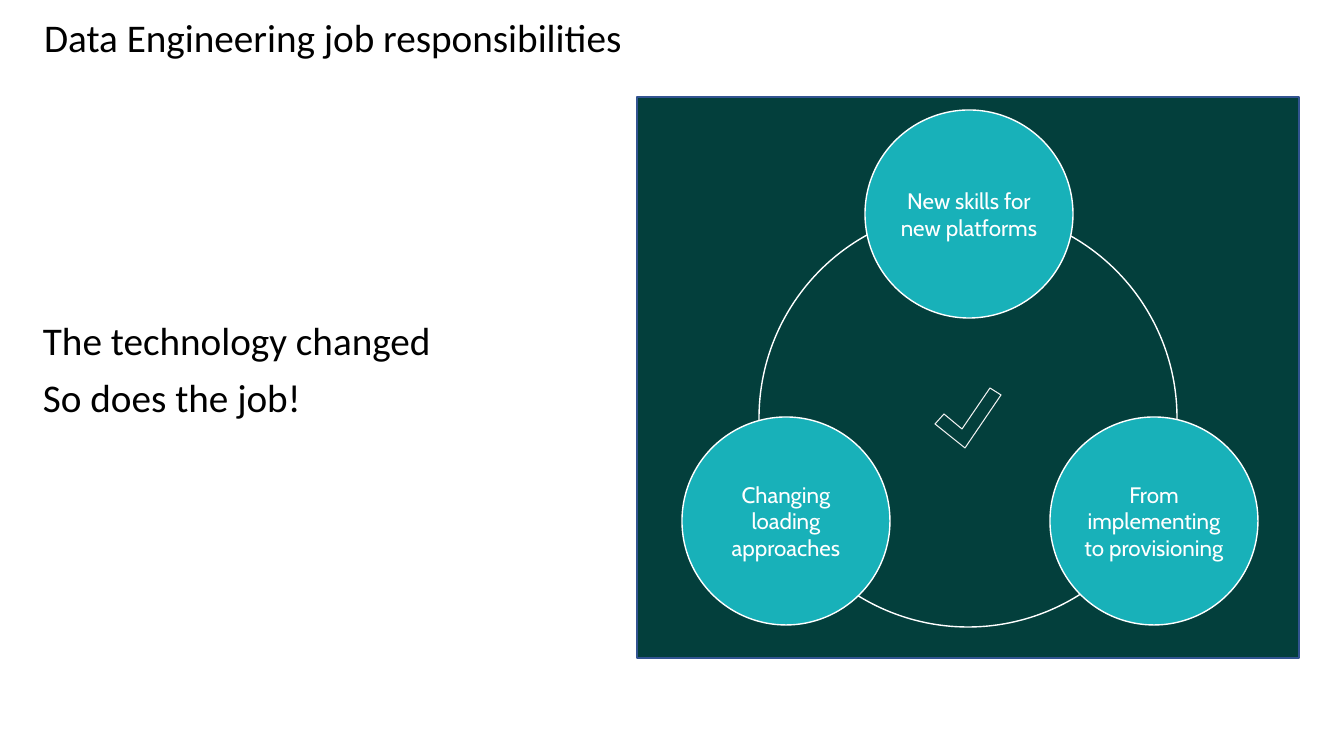
"""Build the slide on data engineering job responsibilities."""
import pptx
import pptx.dml.color
import pptx.enum.shapes
import pptx.enum.text
import pptx.util

PX = 914400 / 100.8
THEME = {
    "text": "000000", "panel": "033F3C", "panel_line": "325491",
    "circle": "18B1B9", "white": "FFFFFF", "check": "F2F2F2",
    "body_font": "Calibri", "circle_font": "Cabin",
    "body_size": 28, "circle_size": 16,
}
SHAPE = pptx.enum.shapes.MSO_SHAPE
ALIGN = pptx.enum.text.PP_ALIGN
ANCHOR = pptx.enum.text.MSO_ANCHOR


def paint(sp, fill, line, width):
    """Set fill and outline; a fill of None leaves the shape open."""
    sp.shadow.inherit = False
    if fill:
        sp.fill.solid()
        sp.fill.fore_color.rgb = pptx.dml.color.RGBColor.from_string(THEME[fill])
    else:
        sp.fill.background()
    sp.line.color.rgb = pptx.dml.color.RGBColor.from_string(THEME[line])
    sp.line.width = pptx.util.Pt(width)


def write(tf, lines, style, color, frame, para):
    """Fill a text frame with one paragraph a line in a theme style."""
    for name, value in frame.items():
        setattr(tf, name, value)
    for i, line in enumerate(lines):
        p = tf.paragraphs[0] if i == 0 else tf.add_paragraph()
        for name, value in para.items():
            setattr(p, name, value)
        p.space_before = pptx.util.Pt(10 if i else 0)
        r = p.add_run()
        r.text = line
        r.font.name = THEME[style + "_font"]
        r.font.size = pptx.util.Pt(THEME[style + "_size"])
        r.font.color.rgb = pptx.dml.color.RGBColor.from_string(THEME[color])


prs = pptx.Presentation()
prs.slide_width, prs.slide_height = round(1344 * PX), round(756 * PX)
s = prs.slides.add_slide(prs.slide_layouts[5])

panel = s.shapes.add_shape(SHAPE.RECTANGLE, *[round(v * PX) for v in (637, 97, 662, 561)])
paint(panel, "panel", "panel_line", 1)

plain = {"word_wrap": True, "auto_size": pptx.enum.text.MSO_AUTO_SIZE.NONE}
left = {"alignment": ALIGN.LEFT, "line_spacing": 0.9}
title = s.shapes.title
for name, value in zip(("left", "top", "width", "height"), (34, 20, 1275, 39)):
    setattr(title, name, round(value * PX))
write(title.text_frame, ["Data Engineering job responsibilities"], "body", "text",
      {**plain, "vertical_anchor": ANCHOR.MIDDLE}, left)

body = s.shapes.add_textbox(*[round(v * PX) for v in (33, 317, 590, 114)])
write(body.text_frame, ["The technology changed", "So does the job!"], "body", "text",
      {**plain, "vertical_anchor": ANCHOR.TOP}, left)

ring = s.shapes.add_shape(SHAPE.OVAL, *[round(v * PX) for v in (759, 209, 418, 418)])
paint(ring, None, "white", 1)

check_points = [(944, 414), (962, 429), (990, 388), (1001, 395), (965, 448), (935, 424)]
builder = s.shapes.build_freeform(*check_points[0], scale=PX)
builder.add_line_segments(check_points[1:], close=True)
paint(builder.convert_to_shape(), None, "check", 0.75)

centred = {**plain, "vertical_anchor": ANCHOR.MIDDLE, "margin_left": 0,
           "margin_top": 0, "margin_right": 0, "margin_bottom": 0}
circles = [
    (865, 110, "New skills for new platforms"),
    (682, 417, "Changing loading approaches"),
    (1050, 417, "From implementing to provisioning"),
]
for x, y, label in circles:
    sp = s.shapes.add_shape(SHAPE.OVAL, *[round(v * PX) for v in (x, y, 208, 208)])
    paint(sp, "circle", "white", 1)
    write(sp.text_frame, [label], "circle", "white", centred, {"alignment": ALIGN.CENTER})

prs.save("out.pptx")
